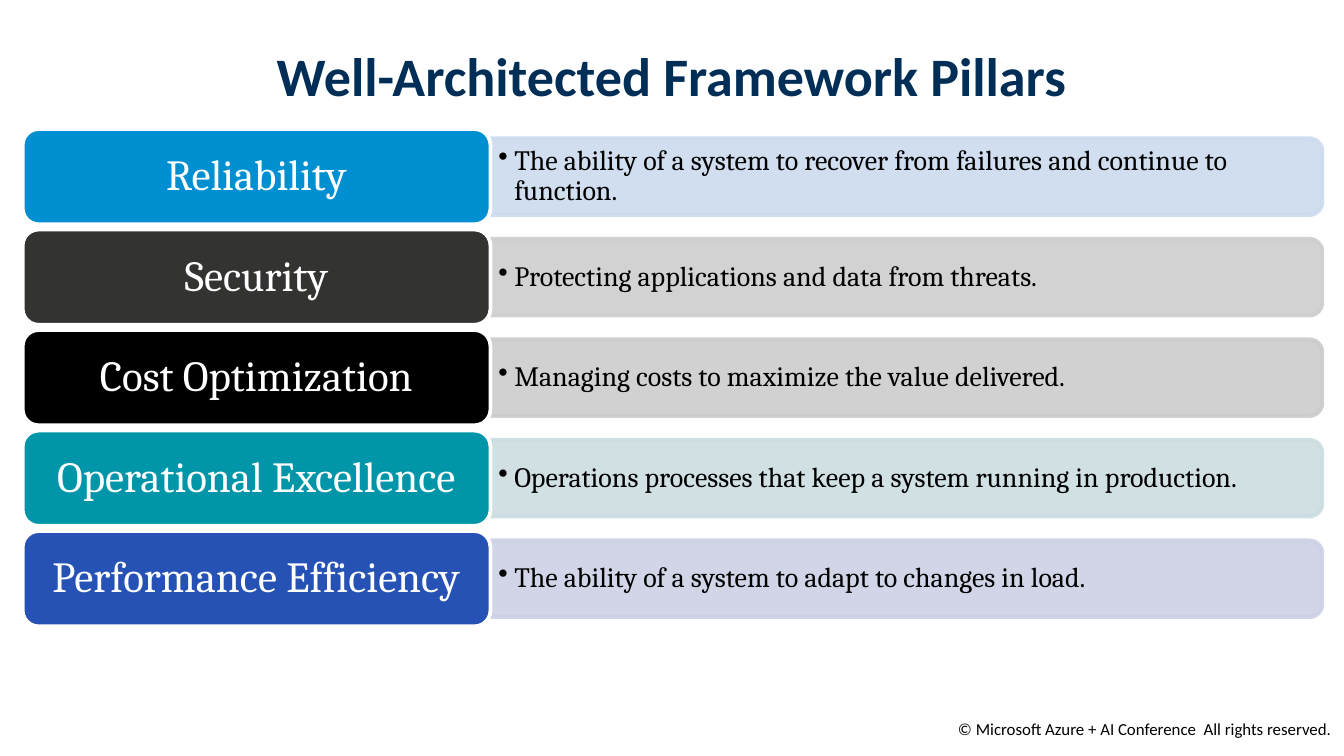
from lxml.etree import SubElement
from pptx import Presentation
from pptx.dml.color import RGBColor
from pptx.enum.shapes import MSO_SHAPE
from pptx.enum.text import MSO_ANCHOR, PP_ALIGN
from pptx.oxml.ns import qn
from pptx.util import Cm, Pt


def color(value):
    return RGBColor.from_string(value)


def write(shape, text, font, size, ink, align, inset_x=0.25, inset_y=0.13, bold=False):
    frame = shape.text_frame
    frame.word_wrap = True
    frame.vertical_anchor = MSO_ANCHOR.MIDDLE
    frame.margin_left = frame.margin_right = Cm(inset_x)
    frame.margin_top = frame.margin_bottom = Cm(inset_y)
    paragraph = frame.paragraphs[0]
    paragraph.alignment = align
    run = paragraph.add_run()
    run.text = text
    run.font.name = font
    run.font.size = Pt(size)
    run.font.bold = bold
    run.font.color.rgb = color(ink)
    return paragraph


pillars = [
    ("Reliability", "008FD1", "CCDBEE",
     "The ability of a system to recover from failures and continue to function."),
    ("Security", "333432", "CECECE", "Protecting applications and data from threats."),
    ("Cost Optimization", "000000", "CCCCCC", "Managing costs to maximize the value delivered."),
    ("Operational Excellence", "0095A8", "CCDDE1",
     "Operations processes that keep a system running in production."),
    ("Performance Efficiency", "2752B5", "CDD1E5",
     "The ability of a system to adapt to changes in load."),
]

presentation = Presentation()
presentation.slide_width = Cm(25.4)
presentation.slide_height = Cm(14.29)
slide = presentation.slides.add_slide(presentation.slide_layouts[6])
slide.background.fill.solid()
slide.background.fill.fore_color.rgb = color("FEFFFE")

copyright_line = slide.shapes.add_textbox(Cm(16.31), Cm(13.46), Cm(9.09), Cm(0.64))
write(copyright_line, "© Microsoft Azure + AI Conference  All rights reserved.",
      "Calibri", 9, "000000", PP_ALIGN.RIGHT)

title = slide.shapes.add_textbox(Cm(1.27), Cm(0.64), Cm(22.86), Cm(1.57))
write(title, "Well-Architected Framework Pillars", "Calibri", 29, "002E56",
      PP_ALIGN.CENTER, bold=True)

first_middle, pitch = 3.34, 1.9
pillar_left, pillar_width, pillar_height = 0.43, 8.84, 1.8
band_length, band_height = 15.72, 1.45
band_center = pillar_left + pillar_width + band_length / 2

for row, (name, pillar_fill, band_fill, meaning) in enumerate(pillars):
    middle = first_middle + row * pitch

    band = slide.shapes.add_shape(
        MSO_SHAPE.ROUND_2_SAME_RECTANGLE,
        Cm(band_center - band_height / 2), Cm(middle - band_length / 2),
        Cm(band_height), Cm(band_length))
    band.rotation = 90
    band.shadow.inherit = False
    band.line.width = Pt(2)
    for paint in (band.fill, band.line.fill):
        paint.solid()
        paint.fore_color.rgb = color(band_fill)
    for tint in band.element.spPr.iter(qn("a:srgbClr")):
        SubElement(tint, qn("a:alpha"), val="90000")

    description = slide.shapes.add_textbox(
        Cm(pillar_left + pillar_width), Cm(middle - 0.65), Cm(15.65), Cm(1.3))
    bullet = write(description, meaning, "Cambria", 15, "000000", PP_ALIGN.LEFT, 0.15, 0.08)
    bullet.level = 1
    bullet.line_spacing = 0.9
    properties = bullet._p.get_or_add_pPr()
    properties.set("marL", str(Cm(0.3)))
    properties.set("indent", str(-Cm(0.3)))
    SubElement(properties, qn("a:buChar"), char="•")

    pillar = slide.shapes.add_shape(
        MSO_SHAPE.ROUNDED_RECTANGLE, Cm(pillar_left), Cm(middle - pillar_height / 2),
        Cm(pillar_width), Cm(pillar_height))
    pillar.shadow.inherit = False
    pillar.fill.solid()
    pillar.fill.fore_color.rgb = color(pillar_fill)
    pillar.line.color.rgb = color("FEFFFE")
    pillar.line.width = Pt(2)
    label = write(pillar, name, "Cambria", 23, "FEFFFE", PP_ALIGN.CENTER)
    label.line_spacing = 0.9

presentation.save("out.pptx")
